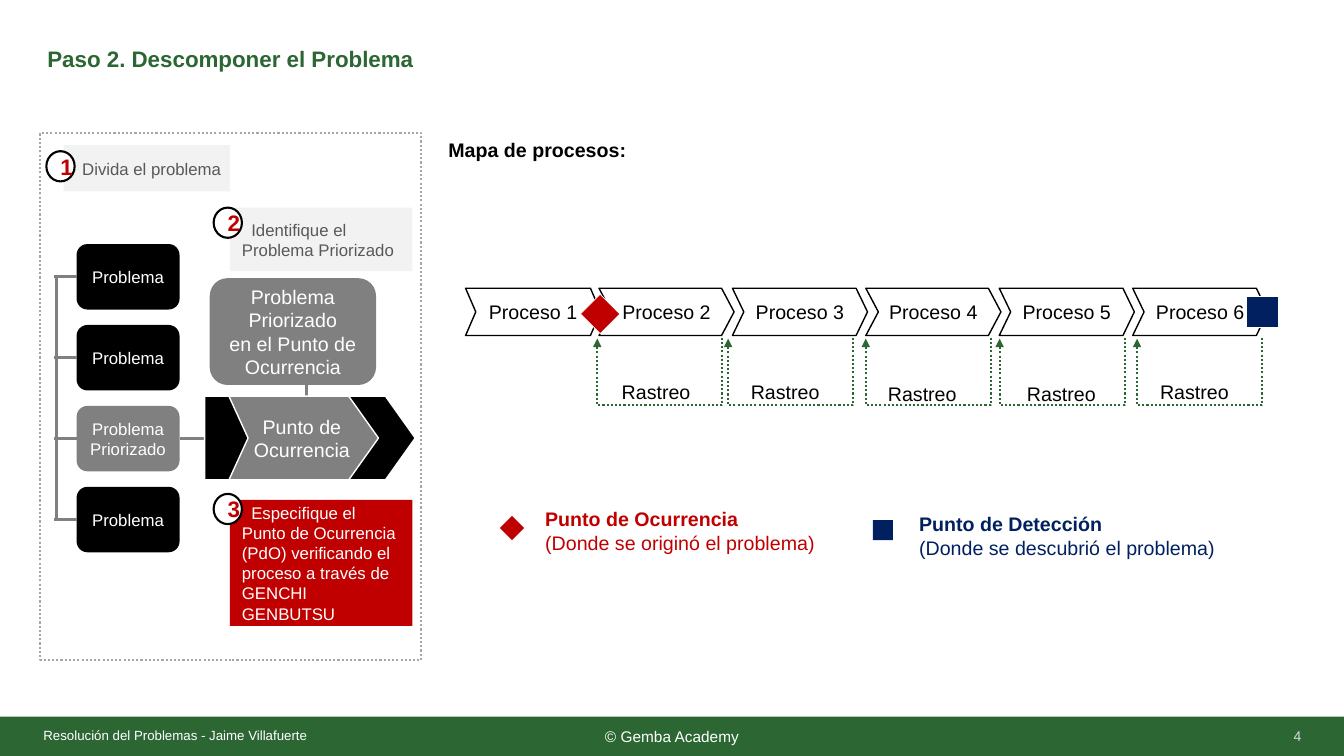
"""Build the slide on breaking a problem down, with its process map."""
from dataclasses import dataclass
from typing import Any, Optional

import pptx
import pptx.dml.color
import pptx.enum.dml
import pptx.enum.shapes
import pptx.enum.text
import pptx.oxml
import pptx.oxml.ns
import pptx.util

Pt = pptx.util.Pt
qn = pptx.oxml.ns.qn
SHAPE = pptx.enum.shapes.MSO_SHAPE
CONNECTOR = pptx.enum.shapes.MSO_CONNECTOR
ALIGN = pptx.enum.text.PP_ALIGN
ANCHOR = pptx.enum.text.MSO_ANCHOR
DOTTED = pptx.enum.dml.MSO_LINE.ROUND_DOT

COLORS = {
    "green": "2B6633", "white": "FFFFFF", "black": "000000", "gray": "808080",
    "red": "C00000", "navy": "002060", "pale": "F2F2F2", "slate": "595959",
    "silver": "D9D9D9", "frame": "A6A6A6",
}


@dataclass(frozen=True)
class Box:
    """A shape, or a text box when kind is None; lengths are in points."""
    x: float
    y: float
    w: float
    h: float
    kind: Optional[SHAPE] = None
    fill: Optional[str] = None
    line: Optional[str] = None
    weight: float = 1
    dash: Any = None
    adj: Optional[float] = None
    text: tuple[str, ...] = ()
    size: float = 14
    color: str = "white"
    bold_lines: int = 0
    align: Any = ALIGN.CENTER
    anchor: Any = ANCHOR.MIDDLE
    insets: tuple[float, float, float, float] = (7.2, 3.6, 7.2, 3.6)
    indent: float = 0
    spacing: Any = None
    wrap: bool = True


def rgb(name: str) -> pptx.dml.color.RGBColor:
    """Look a colour up by name."""
    return pptx.dml.color.RGBColor.from_string(COLORS[name])


def apply(obj: Any, values: dict[str, Any]) -> None:
    """Set each attribute that has a value."""
    for name, value in values.items():
        if value is not None:
            setattr(obj, name, value)


def write(tf: Any, box: Box) -> None:
    """Fill a text frame with the paragraphs of a box."""
    margins = ("margin_left", "margin_top", "margin_right", "margin_bottom")
    apply(tf, {"word_wrap": box.wrap, "vertical_anchor": box.anchor,
               "auto_size": pptx.enum.text.MSO_AUTO_SIZE.NONE})
    apply(tf, {name: Pt(inset) for name, inset in zip(margins, box.insets)})
    for i, line in enumerate(box.text):
        p = tf.paragraphs[0] if i == 0 else tf.add_paragraph()
        apply(p, {"alignment": box.align, "line_spacing": box.spacing})
        if box.indent:
            p._p.get_or_add_pPr().set("indent", str(int(Pt(box.indent))))
        r = p.add_run()
        r.text = line
        apply(r.font, {"name": "Arial", "size": Pt(box.size), "bold": i < box.bold_lines})
        r.font.color.rgb = rgb(box.color)


def draw(s: Any, box: Box) -> Any:
    """Draw a box on the slide and return its shape."""
    frame = (Pt(box.x), Pt(box.y), Pt(box.w), Pt(box.h))
    if box.kind is None:
        sp = s.shapes.add_textbox(*frame)
    else:
        sp = s.shapes.add_shape(box.kind, *frame)
        sp.shadow.inherit = False
        if box.adj is not None:
            sp.adjustments[0] = box.adj
        if box.fill:
            sp.fill.solid()
            sp.fill.fore_color.rgb = rgb(box.fill)
        else:
            sp.fill.background()
        if box.line:
            sp.line.color.rgb = rgb(box.line)
            apply(sp.line, {"width": Pt(box.weight), "dash_style": box.dash})
        else:
            sp.line.fill.background()
    if box.text:
        write(sp.text_frame, box)
    return sp


def connect(s: Any, kind: Any, ends: tuple[float, float, float, float], color: str,
            weight: float, dash: Any = None) -> Any:
    """Draw a connector between two points."""
    sp = s.shapes.add_connector(kind, *map(Pt, ends))
    sp.line.color.rgb = rgb(color)
    apply(sp.line, {"width": Pt(weight), "dash_style": dash})
    pptx.oxml.ns  
    sp._element.spPr.append(sp._element.spPr.makeelement(qn("a:effectLst"), {}))
    return sp


def trace_back(s: Any, left: float) -> None:
    """Draw a dotted loop that leads back to the start of a process."""
    span, rise, depth, top = 89.3, 0.72, 48.9, 241.6
    x, y = left + span / 2 - rise / 2, top - span / 2
    sp = connect(s, CONNECTOR.ELBOW, (x, y, x + rise, y + span), "green", 1.5, DOTTED)
    props = sp._element.spPr
    props.find(qn("a:xfrm")).set("rot", "5400000")
    guides = props.find(qn("a:prstGeom")).get_or_add_avLst()
    guides.append(guides.makeelement(
        qn("a:gd"), {"name": "adj1", "fmla": f"val {round(depth / rise * 100000)}"}))
    ln = sp.line._get_or_add_ln()
    ln.append(ln.makeelement(qn("a:tailEnd"), {"type": "triangle"}))


def draw_breakdown(s: Any) -> None:
    """Draw the panel with the three steps."""
    left, top, step = 54.7, 174.3, 57.8
    labels = [("Problema",), ("Problema",), ("Problema", "Priorizado"), ("Problema",)]
    connect(s, CONNECTOR.STRAIGHT, (218.9, 283.7, 218.9, 252.7), "gray", 2.25)
    connect(s, CONNECTOR.STRAIGHT, (40.3, 371.5, 40.3, 198), "gray", 2.25)
    for i, label in enumerate(labels):
        chosen = len(label) > 1
        sp = draw(s, Box(left, top + i * step, 73.6, 46.8, SHAPE.ROUNDED_RECTANGLE,
                         "gray" if chosen else "black", text=label, size=12))
        y = top + i * step + 23.4
        connect(s, CONNECTOR.STRAIGHT, (left, y, 38.9, y), "gray", 2.25).begin_connect(sp, 1)
        if chosen:
            link = connect(s, CONNECTOR.STRAIGHT, (128.3, y, 146.2, y), "gray", 2.25)
            link.begin_connect(sp, 3)
    note = {"kind": SHAPE.RECTANGLE, "size": 12, "align": ALIGN.LEFT}
    arrow = {"y": 283, "h": 59.8, "line": "white"}
    boxes = [
        Box(164.2, 357.1, 130.3, 90, fill="red", insets=(8.6, 0, 5.8, 0), indent=6.7,
            text=("Especifique el Punto de Ocurrencia (PdO) verificando el proceso "
                  "a través de GENCHI GENBUTSU",), **note),
        Box(149.8, 198.7, 118.8, 76.3, SHAPE.ROUNDED_RECTANGLE, "gray",
            text=("Problema Priorizado", "en el Punto de Ocurrencia")),
        Box(x=157.7, w=129.6, kind=SHAPE.PENTAGON, fill="gray", adj=0.454,
            text=("Punto de", "Ocurrencia"), **arrow),
        Box(x=146.2, w=31, kind=SHAPE.PENTAGON, fill="black", adj=0.44, **arrow),
        Box(x=249.1, w=47.5, kind=SHAPE.CHEVRON, fill="black", adj=0.448, **arrow),
        Box(45.4, 103.7, 118.8, 33.1, fill="pale", color="slate", insets=(0, 0, 0, 0),
            indent=13.3, text=("Divida el problema",), **note),
        Box(164.2, 148.3, 130.3, 45.4, fill="pale", color="slate", insets=(8.6, 0, 0, 0),
            indent=6.7, text=("Identifique el Problema Priorizado",), **note),
        Box(28.8, 95, 272.2, 376.6, SHAPE.RECTANGLE, line="frame", weight=1.5, dash=DOTTED),
    ]
    for box in boxes:
        draw(s, box)
    for number, (x, y) in enumerate([(33.1, 108), (152.6, 148.3), (152.6, 352.8)], 1):
        draw(s, Box(x, y, 20.2, 21.6, SHAPE.OVAL, "white", "black", 1.5,
                    text=(str(number),), size=16, color="red", bold_lines=1))


def draw_process_map(s: Any) -> None:
    """Draw the processes, the loops between them and the legend."""
    label = {"color": "black", "align": ALIGN.LEFT, "anchor": ANCHOR.TOP}
    draw(s, Box(313.2, 93.6, 331.2, 24, text=("Mapa de procesos:",), bold_lines=1,
                spacing=Pt(18), **label))
    for i, adj in enumerate((0.216, 0.265, 0.241, 0.265, 0.241, 0.241)):
        draw(s, Box(332.6 + 95.3 * i, 205.9, 96.5, 33.8, SHAPE.CHEVRON, "white", "black",
                    adj=adj, text=(f"Proceso {i + 1}",), color="black"))
    for left, x, y in [(426.6, 437, 267.8), (520.1, 529.2, 267.8), (618.4, 627.1, 269.3),
                       (714, 726.5, 269.3), (812.2, 821.5, 267.8)]:
        trace_back(s, left)
        draw(s, Box(x, y, 70.6, 24, text=("Rastreo",), **label))
    diamond, square = SHAPE.FLOWCHART_DECISION, SHAPE.RECTANGLE
    draw(s, Box(414.7, 210.2, 28.1, 28.1, diamond, "red", "white", 0.5))
    draw(s, Box(890.6, 211.7, 22.3, 22.3, square, "navy", "white", 0.5))
    draw(s, Box(357.1, 368.6, 17.3, 17.3, diamond, "red"))
    draw(s, Box(623.5, 371.5, 14.4, 14.4, square, "navy"))
    for x, y, w, color, text in [
        (382.3, 358.6, 208.1, "red", ("Punto de Ocurrencia", "(Donde se originó el problema)")),
        (649.4, 362.2, 226.8, "navy", ("Punto de Detección", "(Donde se descubrió el problema)")),
    ]:
        draw(s, Box(x, y, w, 41, text=text, bold_lines=1, wrap=False, **{**label, "color": color}))


def main() -> None:
    """Build and save the presentation."""
    prs = pptx.Presentation()
    apply(prs, {"slide_width": Pt(960), "slide_height": Pt(540)})
    s = prs.slides.add_slide(prs.slide_layouts[5])
    title = Box(26.6, 24.5, 828, 37.4, text=("Paso 2. Descomponer el Problema",), size=16,
                color="green", bold_lines=1, align=ALIGN.LEFT, spacing=0.9)
    apply(s.shapes.title, {"left": Pt(title.x), "top": Pt(title.y),
                           "width": Pt(title.w), "height": Pt(title.h)})
    write(s.shapes.title.text_frame, title)
    draw(s, Box(0, 511.9, 960, 28.1, SHAPE.RECTANGLE, "green", text=("© Gemba Academy",), size=11))
    draw(s, Box(31, 516.2, 216, 17.3, text=("Resolución del Problemas - Jaime Villafuerte",),
                size=9.5, align=ALIGN.LEFT, insets=(0, 0, 0, 0)))
    draw(s, Box(720.7, 511.2, 216, 28.8, text=("4",), size=10, color="silver", align=ALIGN.RIGHT))
    draw_breakdown(s)
    draw_process_map(s)
    prs.save("out.pptx")


if __name__ == "__main__":
    main()
